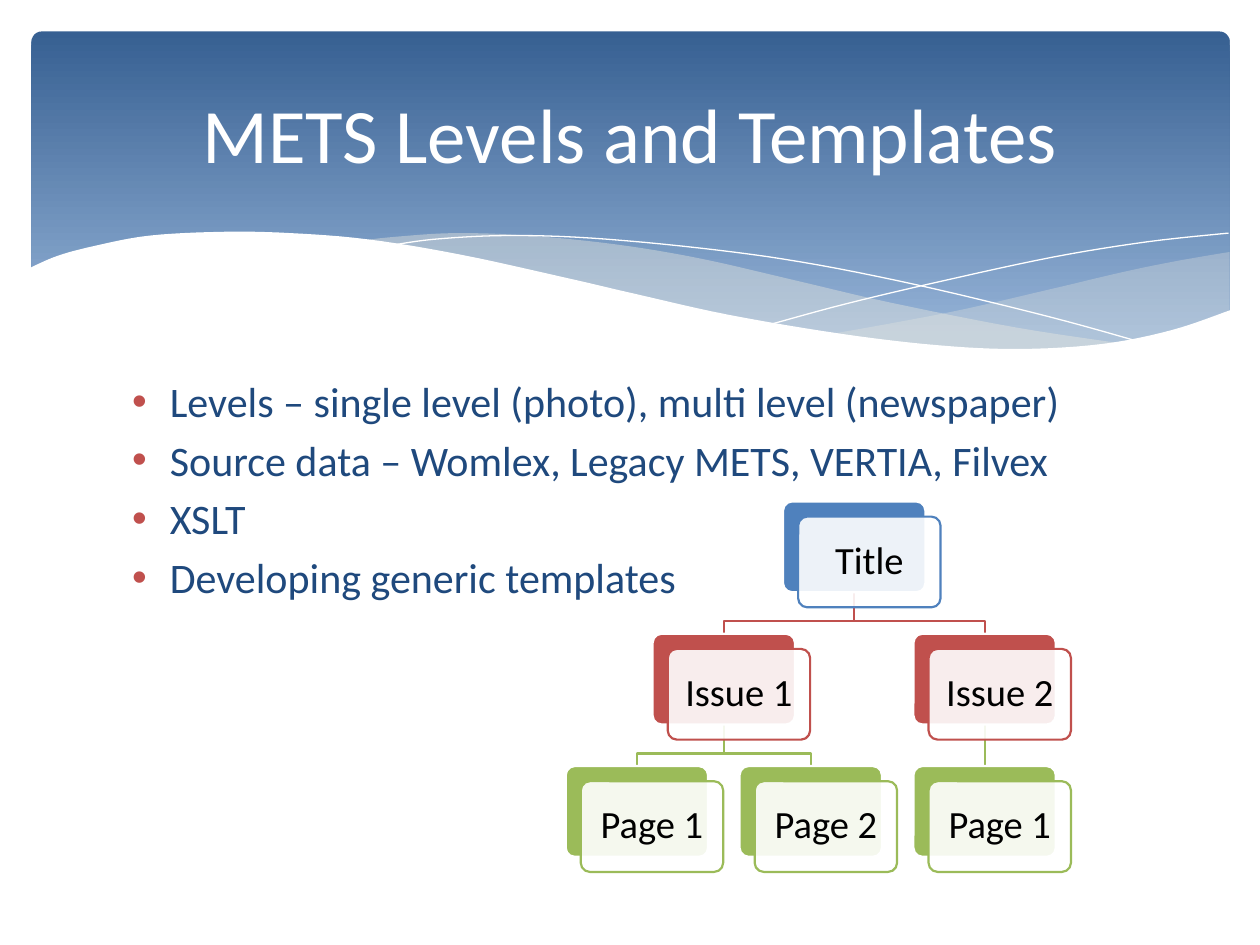
from dataclasses import dataclass

from lxml import etree
from pptx import Presentation
from pptx import util as u
from pptx.dml.color import RGBColor
from pptx.enum import shapes, text
from pptx.oxml import ns

TITLE = "METS Levels and Templates"
POINTS = [
    "Levels – single level (photo), multi level (newspaper)",
    "Source data – Womlex, Legacy METS, VERTIA, Filvex",
    "XSLT",
    "Developing generic templates",
]
TREE = ("Title", [
    ("Issue 1", [("Page 1", []), ("Page 2", [])]),
    ("Issue 2", [("Page 1", [])]),
])

# Each wave is a list of strokes; a stroke is smoothed through its points.
RIGHT = [
    [(976, 200), (935, 207), (891, 216), (832, 230), (753, 248), (661, 265)],
    [(661, 265), (705, 271), (757, 276), (814, 278), (872, 274), (921, 265),
     (976, 247)],
]
MIDDLE = [
    [(893, 273), (807, 260), (706, 240), (629, 222), (555, 205), (489, 194),
     (420, 187), (361, 185), (313, 188), (286, 191)],
    [(286, 191), (342, 199), (404, 211), (449, 222), (530, 240), (618, 258),
     (695, 270), (761, 277), (818, 278), (867, 276), (893, 273)],
]
FALL = [[(309, 195), (344, 190), (401, 187), (469, 189), (556, 197),
         (636, 208), (727, 226), (831, 251), (907, 272)]]
RISE = [[(613, 257), (672, 241), (748, 223), (836, 204), (910, 192),
         (975, 185)]]
FRONT = [
    [(977, 246), (930, 262), (875, 273), (809, 277), (744, 274), (668, 265),
     (579, 250), (503, 233), (447, 220), (365, 202), (292, 190), (230, 185),
     (177, 184), (119, 187), (76, 195), (46, 203), (23, 213)],
    [(23, 329)], [(977, 329)],
]


@dataclass(frozen=True)
class Theme:
    font: str = "Calibri"
    white: str = "FFFFFF"
    black: str = "000000"
    ink: str = "1F497D"
    deep: str = "376092"
    pale: str = "95B3D7"
    sand: str = "EEECE1"
    dot: str = "C0504D"
    levels: tuple = ("4F81BD", "C0504D", "9BBB59")
    head: int = 44
    body: int = 24
    node: int = 22
    rule: float = 1.25


T = Theme()
PX = u.Inches(1) // 100
STEP, ROW, LEFT, TOP = 138, 105, 449, 398
WIDE, HIGH, SHIFT, DROP = 113, 72, 12, 23


def rgb(code):
    return RGBColor.from_string(code)


def emu(*sizes):
    return [u.Emu(round(size * PX)) for size in sizes]


def paint(shape, fill=None, line=None, width=T.rule, alpha=None):
    shape.shadow.inherit = False
    if fill:
        shape.fill.solid()
        shape.fill.fore_color.rgb = rgb(fill)
        if alpha:
            tint = shape.fill._xPr.find(".//" + ns.qn("a:srgbClr"))
            etree.SubElement(tint, ns.qn("a:alpha"), val=str(alpha * 1000))
    else:
        shape.fill.background()
    if line:
        shape.line.color.rgb = rgb(line)
        shape.line.width = u.Pt(width)
    else:
        shape.line.fill.background()


def write(run, size, color):
    run.font.name, run.font.size = T.font, u.Pt(size)
    run.font.color.rgb = rgb(color)


def smooth(pts, parts=6):
    """Points along a Catmull-Rom curve through pts."""
    ends = [pts[0], *pts, pts[-1]]
    curve = [pts[0]]
    for a, b, c, d in zip(ends, ends[1:], ends[2:], ends[3:]):
        for i in range(1, parts + 1):
            t = i / parts
            curve.append(tuple(
                (2 * q + (r - p) * t + (2 * p - 5 * q + 4 * r - s) * t ** 2
                 + (3 * q - p - 3 * r + s) * t ** 3) / 2
                for p, q, r, s in zip(a, b, c, d)))
    return curve


def trace(slide, pts, close=False):
    first, *rest = [emu(*pt) for pt in pts]
    pen = slide.shapes.build_freeform(*first)
    pen.add_line_segments(rest, close=close)
    return pen.convert_to_shape()


def box(slide, place, adj):
    shape = slide.shapes.add_shape(shapes.MSO_SHAPE.ROUNDED_RECTANGLE,
                                   *emu(*place))
    shape.adjustments[0] = adj
    return shape


def banner(slide):
    panel = box(slide, (25, 25, 951, 270), 0.03)
    paint(panel)
    panel.fill.gradient()
    panel.fill.gradient_angle = 270
    stops = zip(panel.fill.gradient_stops, (T.deep, T.pale), (0, 0.9))
    for stop, color, pos in stops:
        stop.color.rgb, stop.position = rgb(color), pos
    for wave, fill, line, alpha in [
        (RIGHT, T.sand, None, 29), (MIDDLE, T.sand, None, 40),
        (FALL, None, T.white, None), (RISE, None, T.white, None),
        (FRONT, T.white, None, None),
    ]:
        pts = [pt for stroke in wave for pt in smooth(stroke)]
        paint(trace(slide, pts, bool(fill)), fill, line, 0, alpha)


def heading(slide):
    title = slide.shapes.title
    slide.shapes._spTree.append(title._element)
    title.left, title.top, title.width, title.height = emu(50, 37, 900, 137)
    title.text_frame.text = TITLE
    title.text_frame.vertical_anchor = text.MSO_ANCHOR.MIDDLE
    para = title.text_frame.paragraphs[0]
    para.alignment = text.PP_ALIGN.CENTER
    write(para.runs[0], T.head, T.white)


def bullets(slide):
    frame = slide.shapes.add_textbox(*emu(95, 293, 810, 377)).text_frame
    frame.word_wrap = True
    frame.text = "\n".join(POINTS)
    for para in frame.paragraphs:
        para.space_before = u.Pt(T.body * 0.2)
        write(para.runs[0], T.body, T.ink)
        props = para._p.get_or_add_pPr()
        props.set("marL", str(30 * PX))
        props.set("indent", str(-30 * PX))
        tint = etree.SubElement(props, ns.qn("a:buClr"))
        etree.SubElement(tint, ns.qn("a:srgbClr"), val=T.dot)
        etree.SubElement(props, ns.qn("a:buFont"), typeface="Arial")
        etree.SubElement(props, ns.qn("a:buChar"), char="•")


def card(slide, label, x, y, color):
    back = box(slide, (x, y, WIDE, HIGH), 0.1)
    paint(back, color, T.white)
    front = box(slide, (x + SHIFT, y + SHIFT, WIDE, HIGH), 0.1)
    paint(front, T.white, color, alpha=90)
    frame = front.text_frame
    frame.text = label
    frame.word_wrap = True
    frame.vertical_anchor = text.MSO_ANCHOR.MIDDLE
    para = frame.paragraphs[0]
    para.alignment, para.line_spacing = text.PP_ALIGN.CENTER, 0.9
    write(para.runs[0], T.node, T.black)
    return back


def link(slide, top, low, a, b, y, color):
    """Join two cards whose middles are at a and b, from the row at y."""
    start, end = y + HIGH, y + ROW
    if a == b:
        line = slide.shapes.add_connector(shapes.MSO_CONNECTOR.STRAIGHT,
                                          *emu(a, start, b, end))
        line.begin_connect(top, 2)
        line.end_connect(low, 0)
        line.line.color.rgb, line.line.width = rgb(color), u.Pt(T.rule)
        etree.SubElement(line._element.spPr, ns.qn("a:effectLst"))
    else:
        bend = start + DROP
        line = trace(slide, [(a, start), (a, bend), (b, bend), (b, end)])
        paint(line, line=color)
    return line


def grow(slide, node, lines, leaf=0, level=0):
    """Draw a branch; give its card, its left edge and the next free leaf."""
    label, kids = node
    y, drawn, after = TOP + level * ROW, [], leaf
    for kid in kids:
        low, x, after = grow(slide, kid, lines, after, level + 1)
        drawn.append((low, x))
    x = LEFT + leaf * STEP
    if drawn:
        x = sum(edge for _, edge in drawn) / len(drawn)
    top = card(slide, label, x, y, T.levels[level])
    for low, edge in drawn:
        lines.append(link(slide, top, low, x + WIDE / 2, edge + WIDE / 2, y,
                          T.levels[level + 1]))
    return top, x, after if kids else leaf + 1


def chart(slide):
    tree, lines = slide.shapes._spTree, []
    base = len(tree)
    grow(slide, TREE, lines)
    for line in lines:  # links lie behind the cards
        tree.insert(base, line._element)


def main():
    deck = Presentation()
    deck.slide_width, deck.slide_height = emu(1000, 750)
    slide = deck.slides.add_slide(deck.slide_layouts[5])
    for part in (banner, bullets, heading, chart):
        part(slide)
    deck.save("out.pptx")


if __name__ == "__main__":
    main()
